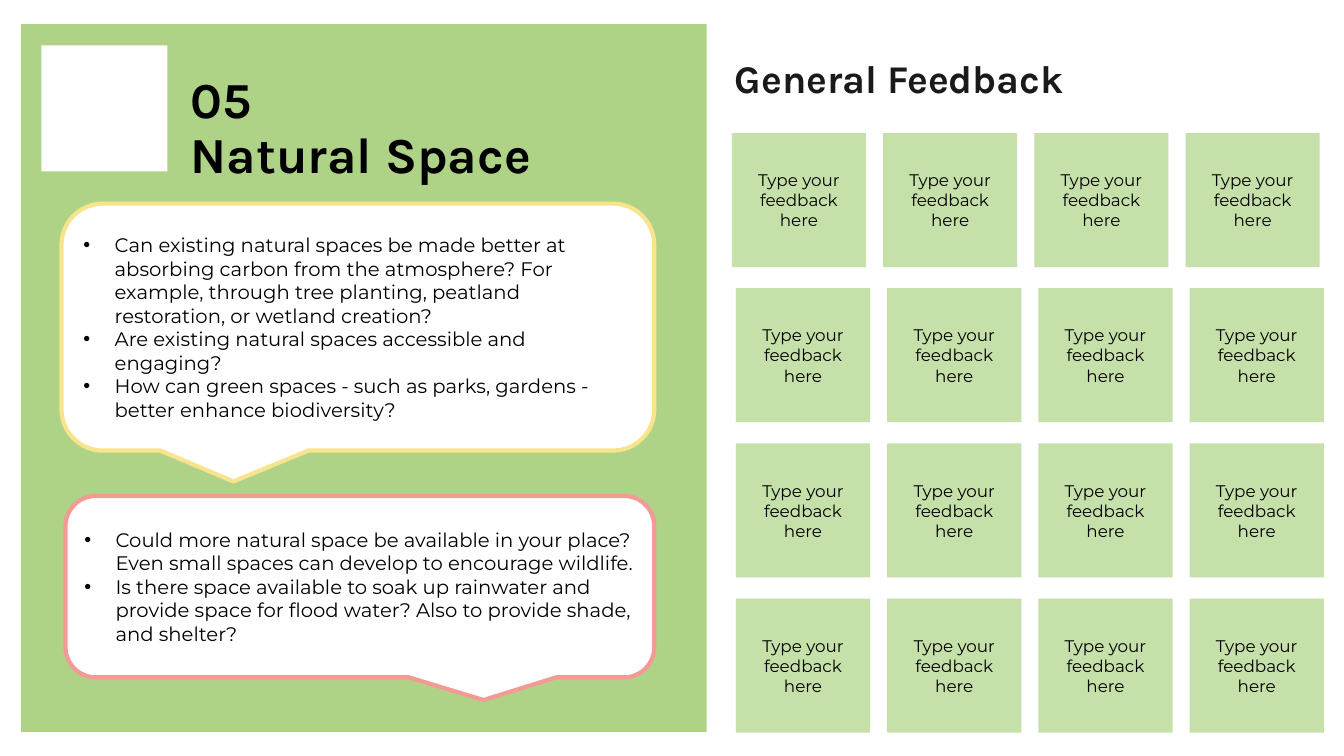
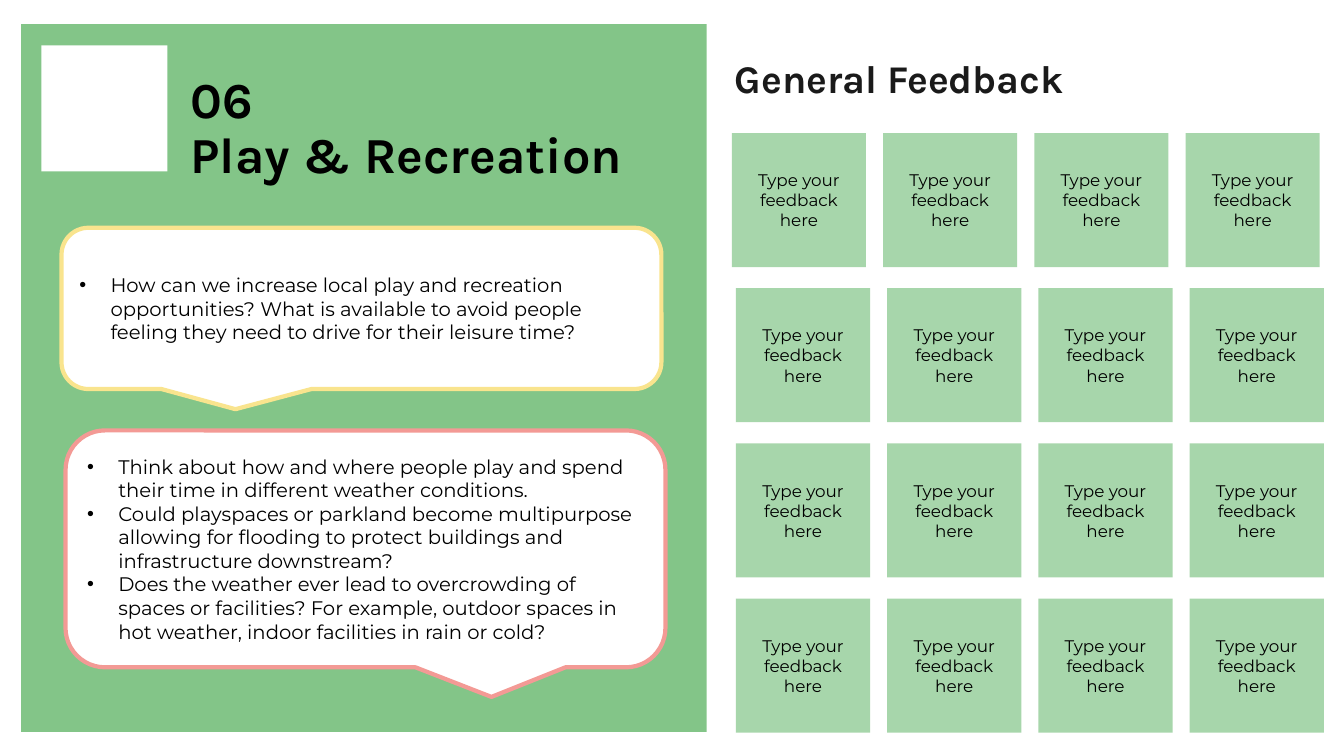
from dataclasses import dataclass

from lxml import etree
from pptx import Presentation, util as u
from pptx.dml.color import RGBColor
from pptx.enum import shapes, text
from pptx.oxml.ns import qn

BLACK, INK, WHITE = "000000", "1A1A1A", "FFFFFF"
YELLOW, PINK = "F9E48E", "F39A95"
HEAD, BODY = "Karla", "Montserrat"
KIND = shapes.MSO_SHAPE
LEFT, MID = text.PP_ALIGN.LEFT, text.PP_ALIGN.CENTER
PANEL = (0.21, 0.24, 6.8, 7.02)
BOARD = (7.3, 1.32, 5.83, 5.95)
GRID, TILE, SHIFT = 4, 1.33, 0.04
INDENT = 0.31


@dataclass
class Bubble:
    box: tuple  # offset from the panel, then size
    points: list


@dataclass
class Topic:
    title: str
    green: str
    first: Bubble
    second: Bubble


TOPICS = [
    Topic(
        "05\vNatural Space", "AED387",
        Bubble((0.4, 1.78, 5.88, 2.45), [
            "Can existing natural spaces be made better at absorbing carbon "
            "from the atmosphere? For example, through tree planting, "
            "peatland restoration, or wetland creation?",
            "Are existing natural spaces accessible and engaging?",
            "How can green spaces - such as parks, gardens - better enhance "
            "biodiversity?",
        ]),
        Bubble((0.44, 4.68, 5.84, 1.8), [
            "Could more natural space be available in your place? Even small "
            "spaces can develop to encourage wildlife.",
            "Is there space available to soak up rainwater and provide space "
            "for flood water? Also to provide shade, and shelter?",
        ]),
    ),
    Topic(
        "06\vPlay & Recreation", "83C588",
        Bubble((0.4, 2.02, 5.95, 1.6), [
            "How can we increase local play and recreation opportunities? "
            "What is available to avoid people feeling they need to drive "
            "for their leisure time?",
        ]),
        Bubble((0.44, 4.03, 5.95, 2.35), [
            "Think about how and where people play and spend their time in "
            "different weather conditions.",
            "Could playspaces or parkland become multipurpose allowing for "
            "flooding to protect buildings and infrastructure downstream?",
            "Does the weather ever lead to overcrowding of spaces or "
            "facilities? For example, outdoor spaces in hot weather, indoor "
            "facilities in rain or cold?",
        ]),
    ),
]


def rgb(code):
    return RGBColor.from_string(code)


def inches(box):
    return [u.Inches(n) for n in box]


def add_box(slide, kind, box, fill, line=None):
    shape = slide.shapes.add_shape(kind, *inches(box))
    shape.shadow.inherit = False
    shape.fill.solid()
    shape.fill.fore_color.rgb = rgb(fill)
    if line:
        shape.line.color.rgb = rgb(line)
        shape.line.width = u.Pt(3)
    else:
        shape.line.fill.background()
    return shape


def write(shape, lines, font, size, color, align=LEFT, bold=False):
    frame = shape.text_frame
    frame.text = "\n".join(lines)
    frame.word_wrap = True
    frame.auto_size = text.MSO_AUTO_SIZE.NONE
    frame.vertical_anchor = text.MSO_ANCHOR.MIDDLE
    for para in frame.paragraphs:
        para.alignment = align
        for run in para.runs:
            run.font.name, run.font.size = font, u.Pt(size)
            run.font.bold = bold
            run.font.color.rgb = rgb(color)


def head(shape, words, size, color):
    write(shape, [words], HEAD, size, color, bold=True)
    shape.text_frame.paragraphs[0].line_spacing = 0.9


def add_dot(para):
    props = para._p.get_or_add_pPr()
    props.set("marL", str(u.Inches(INDENT)))
    props.set("indent", str(-u.Inches(INDENT)))
    etree.SubElement(props, qn("a:buFont")).set("typeface", "Arial")
    etree.SubElement(props, qn("a:buChar")).set("char", "•")


def fade(shape, share):
    """Set the opacity of a solid fill."""
    color = shape.fill._xPr.find(".//" + qn("a:srgbClr"))
    etree.SubElement(color, qn("a:alpha")).set("val", str(int(share * 100000)))


def add_bubble(slide, box, points, line, tip):
    shape = add_box(slide, KIND.ROUNDED_RECTANGULAR_CALLOUT, box, WHITE, line)
    shape.adjustments[0] = tip
    write(shape, points, BODY, 14, BLACK)
    for para in shape.text_frame.paragraphs:
        add_dot(para)


def add_panel(slide, box, topic):
    left, top = box[:2]
    add_box(slide, KIND.RECTANGLE, box, topic.green)
    add_box(slide, KIND.RECTANGLE, (left + 0.2, top + 0.21, 1.25, 1.25), WHITE)

    title = slide.shapes.title
    title.left, title.top, title.width, title.height = inches(
        (left + 1.58, top + 0.32, 11.5, 1.45))
    head(title, topic.title, 36, BLACK)
    slide.shapes.element.append(title.element)  # bring to the front

    for bubble, line, tip in ((topic.first, YELLOW, -0.21),
                              (topic.second, PINK, 0.21)):
        x, y, wide, high = bubble.box
        add_bubble(slide, (left + x, top + y, wide, high),
                   bubble.points, line, tip)


def add_board(slide, box, green):
    left, top, wide, high = box
    label = slide.shapes.add_textbox(
        *inches((left - 0.11, top - 1.24, 5.9, 1.45)))
    head(label, "General Feedback", 28, INK)

    across, down = (wide - TILE) / (GRID - 1), (high - TILE) / (GRID - 1)
    for row in range(GRID):
        start = left - SHIFT if row == 0 else left
        for col in range(GRID):
            spot = (start + col * across, top + row * down, TILE, TILE)
            tile = add_box(slide, KIND.RECTANGLE, spot, green)
            fade(tile, 0.7)
            write(tile, ["Type your feedback here"], BODY, 12, BLACK, MID)


def main():
    deck = Presentation()
    deck.slide_width, deck.slide_height = inches((13.33, 7.5))
    layout = deck.slide_layouts.get_by_name("Title Only")
    for topic in TOPICS:
        slide = deck.slides.add_slide(layout)
        add_panel(slide, PANEL, topic)
        add_board(slide, BOARD, topic.green)
    deck.save("out.pptx")


if __name__ == "__main__":
    main()
